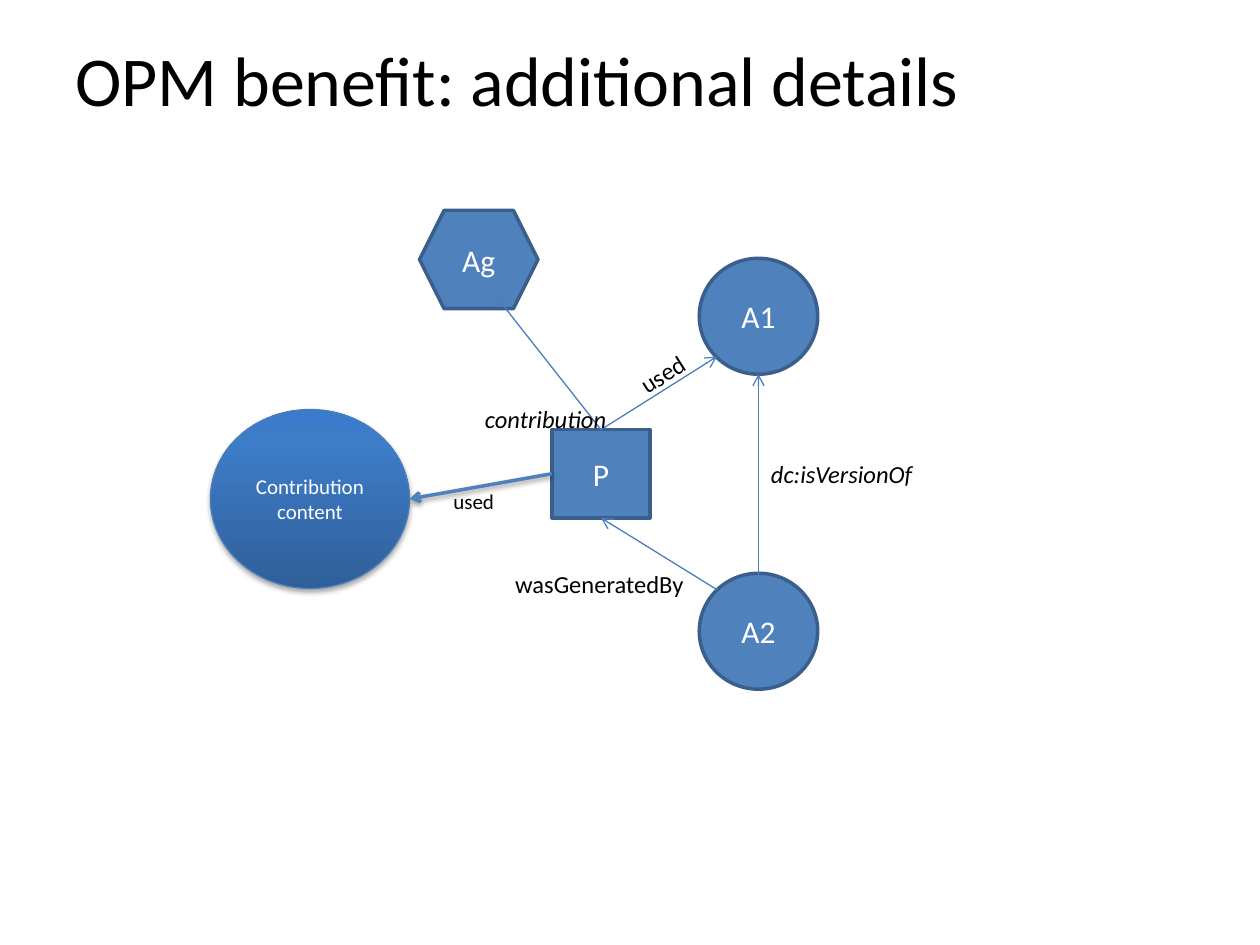
"""Builds the slide "OPM benefit: additional details", a provenance graph."""
import pptx
import pptx.dml.color
import pptx.enum.dml
import pptx.enum.shapes
import pptx.enum.text
import pptx.oxml
import pptx.oxml.ns
import pptx.util
from pptx.util import Inches

COLORS = {
    "node": "4F81BD", "node_edge": "3A5F8C", "arrow": "4B7EBC",
    "dark": "2F5F99", "middle": "3D7CC7", "bright": "3A7CCB",
    "text": "000000", "node_text": "FFFFFF",
}
NS = pptx.oxml.ns.nsdecls("a")
SHAPES = pptx.enum.shapes.MSO_SHAPE
ANCHOR = pptx.enum.text.MSO_ANCHOR
ALIGN = pptx.enum.text.PP_ALIGN
AUTO_SIZE = pptx.enum.text.MSO_AUTO_SIZE


def write(frame, text, size, color, align, italic=False, **frame_format):
    for name, value in frame_format.items():
        setattr(frame, name, value)
    frame.text = text
    font_format = {"name": "Calibri", "size": pptx.util.Pt(size), "italic": italic}
    for paragraph in frame.paragraphs:
        paragraph.alignment = align
        for run in paragraph.runs:
            for name, value in font_format.items():
                setattr(run.font, name, value)
            run.font.color.rgb = pptx.dml.color.RGBColor.from_string(COLORS[color])


def outline(shape, color, width, shadow=None, arrow=False):
    shape.line.color.rgb = pptx.dml.color.RGBColor.from_string(COLORS[color])
    shape.line.width = pptx.util.Pt(width)
    properties = shape._element.spPr
    if arrow:
        properties.find(pptx.oxml.ns.qn("a:ln")).append(
            pptx.oxml.parse_xml(f'<a:tailEnd {NS} type="arrow"/>'))
    effects = ""
    if shadow:
        alpha, blur, distance = shadow
        effects = (f'<a:outerShdw blurRad="{pptx.util.Pt(blur)}" dist="{pptx.util.Pt(distance)}" '
                   f'dir="5400000" rotWithShape="0"><a:srgbClr val="{COLORS["text"]}">'
                   f'<a:alpha val="{alpha * 1000}"/></a:srgbClr></a:outerShdw>')
    properties.append(pptx.oxml.parse_xml(f"<a:effectLst {NS}>{effects}</a:effectLst>"))


presentation = pptx.Presentation()
presentation.slide_width = Inches(10)
presentation.slide_height = Inches(7.5)
slide = presentation.slides.add_slide(presentation.slide_layouts[6])

title = slide.shapes.add_textbox(Inches(0.5), Inches(0), Inches(7.42), Inches(1.25))
write(title.text_frame, "OPM benefit: additional details", 40, "text", ALIGN.LEFT,
      word_wrap=True, vertical_anchor=ANCHOR.MIDDLE)

nodes = {}
for name, kind, left, top, width, height in [
    ("A2", SHAPES.OVAL, 5.55, 4.55, 0.94, 0.92),
    ("A1", SHAPES.OVAL, 5.55, 2.05, 0.94, 0.92),
    ("P", SHAPES.RECTANGLE, 4.38, 3.41, 0.78, 0.7),
    ("Ag", SHAPES.HEXAGON, 3.33, 1.67, 0.94, 0.78),
]:
    node = slide.shapes.add_shape(kind, Inches(left), Inches(top), Inches(width), Inches(height))
    node.fill.solid()
    node.fill.fore_color.rgb = pptx.dml.color.RGBColor.from_string(COLORS["node"])
    outline(node, "node_edge", 2)
    write(node.text_frame, name, 18, "node_text", ALIGN.CENTER,
          word_wrap=True, vertical_anchor=ANCHOR.MIDDLE)
    nodes[name] = node

content = slide.shapes.add_shape(SHAPES.OVAL, Inches(1.67), Inches(3.25), Inches(1.58), Inches(1.42))
content.fill.gradient()
content.fill.gradient_angle = 90
stops = content._element.spPr.find(".//" + pptx.oxml.ns.qn("a:gsLst"))
stops.clear()
for position, color in [(0, "dark"), (80, "middle"), (100, "bright")]:
    stops.append(pptx.oxml.parse_xml(
        f'<a:gs {NS} pos="{position * 1000}"><a:srgbClr val="{COLORS[color]}"/></a:gs>'))
outline(content, "arrow", 0.75, shadow=(35, 3.1, 1.8))
write(content.text_frame, "Contribution\ncontent", 12, "node_text", ALIGN.CENTER,
      word_wrap=True, vertical_anchor=ANCHOR.MIDDLE)

for start, end, start_side, end_side, color, width, shadow in [
    ((6.02, 4.63), (6.02, 2.97), None, None, "arrow", 0.75, None),
    ((5.69, 4.68), (4.77, 4.11), None, 2, "arrow", 0.75, None),
    ((4.77, 3.41), (5.69, 2.83), 0, None, "arrow", 0.75, None),
    ((4.77, 3.41), (3.92, 2.33), 0, None, "arrow", 0.75, None),
    ((4.38, 3.76), (3.25, 3.96), 1, None, "node", 2, (38, 3.1, 1.6)),
]:
    relation = slide.shapes.add_connector(
        pptx.enum.shapes.MSO_CONNECTOR.STRAIGHT, *map(Inches, start + end))
    if start_side is not None:
        relation.begin_connect(nodes["P"], start_side)
    if end_side is not None:
        relation.end_connect(nodes["P"], end_side)
    outline(relation, color, width, shadow, arrow=True)

for text, left, top, width, height, size, italic, rotation in [
    ("contribution", 3.75, 3.16, 1.22, 0.34, 14, True, 0),
    ("dc:isVersionOf", 6.02, 3.59, 1.38, 0.34, 14, True, 0),
    ("used", 4.97, 2.8, 0.58, 0.34, 14, False, 327.5),
    ("wasGeneratedBy", 3.99, 4.47, 1.55, 0.34, 14, False, 0),
    ("used", 3.5, 3.83, 0.53, 0.3, 12, False, 0),
]:
    label = slide.shapes.add_textbox(Inches(left), Inches(top), Inches(width), Inches(height))
    label.rotation = rotation
    write(label.text_frame, text, size, "text", ALIGN.LEFT, italic,
          word_wrap=False, auto_size=AUTO_SIZE.SHAPE_TO_FIT_TEXT)

presentation.save("out.pptx")
